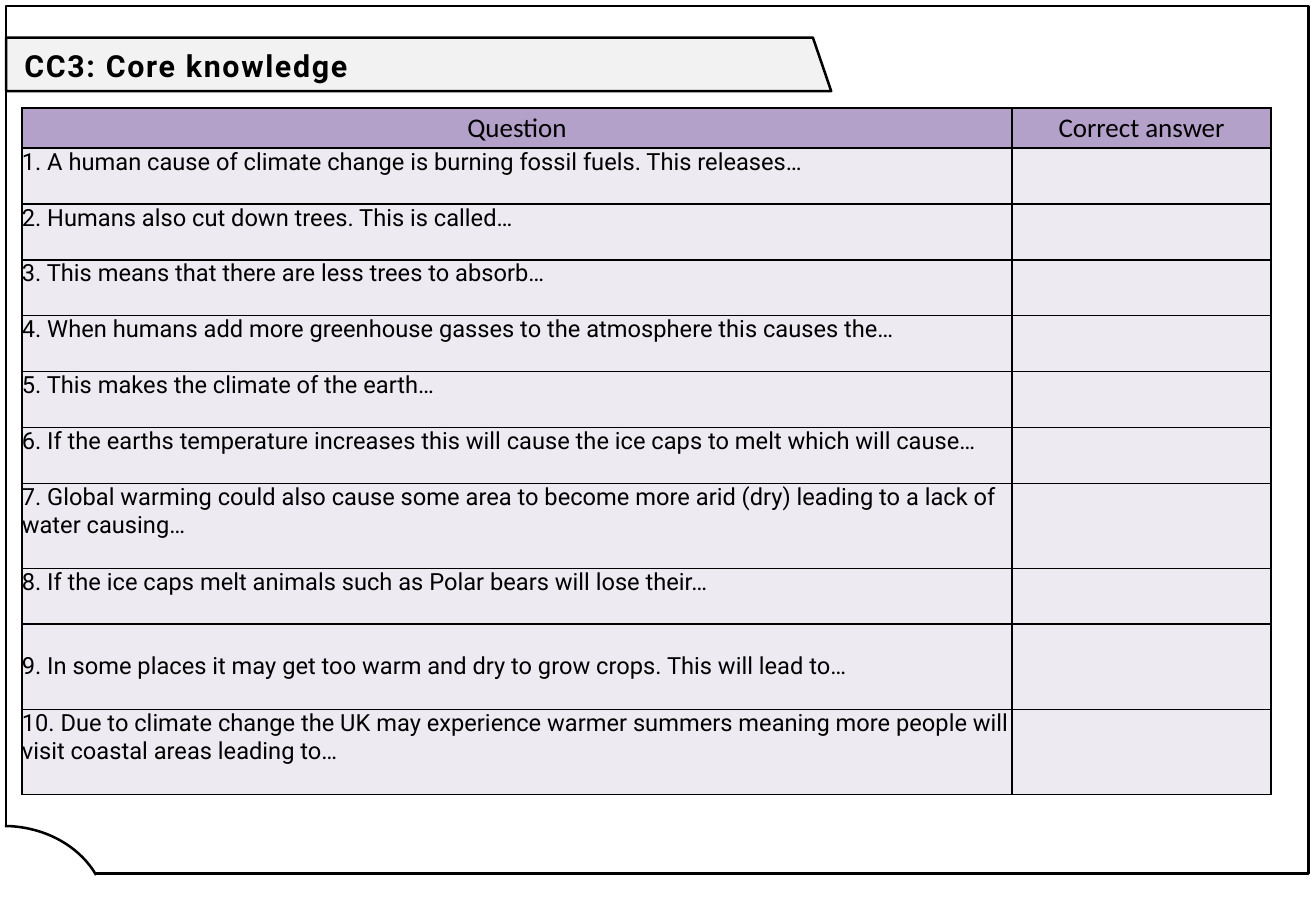
from lxml.etree import SubElement
from pptx import Presentation
from pptx.dml.color import RGBColor
from pptx.enum.shapes import MSO_SHAPE as Shape
from pptx.enum.text import MSO_ANCHOR as Anchor, PP_ALIGN as Align
from pptx.oxml.ns import qn
from pptx.util import Inches, Pt

BLACK = RGBColor(0x00, 0x00, 0x00)
WHITE = RGBColor(0xFF, 0xFF, 0xFF)
BANNER_GREY = RGBColor(0xF2, 0xF2, 0xF2)
HEADER_PURPLE = RGBColor(0xB4, 0xA1, 0xCA)
ROW_LILAC = RGBColor(0xED, 0xEA, 0xF1)

HEADINGS = ["Question", "Correct answer"]
QUESTIONS = [
    "A human cause of climate change is burning fossil fuels. This releases…",
    "Humans also cut down trees. This is called…",
    "This means that there are less trees to absorb…",
    "When humans add more greenhouse gasses to the atmosphere this causes the…",
    "This makes the climate of the earth…",
    "If the earths temperature increases this will cause the ice caps to melt which will cause…",
    "Global warming could also cause some area to become more arid (dry) leading to a lack of "
    "water causing…",
    "If the ice caps melt animals such as Polar bears will lose their…",
    "In some places it may get too warm and dry to grow crops. This will lead to…",
    "Due to climate change the UK may experience warmer summers meaning more people will "
    "visit coastal areas leading to…",
]
TALL_ROWS = {7, 9, 10}
CENTRED_ROW = 9
COLUMN_WIDTHS = [8.15, 2.13]
HEADER_HEIGHT, ROW_HEIGHT, TALL_HEIGHT = 0.33, 0.46, 0.7


def style_outline(shape, fill=None):
    shape.shadow.inherit = False
    if fill is None:
        shape.fill.background()
    else:
        shape.fill.solid()
        shape.fill.fore_color.rgb = fill
    shape.line.color.rgb = BLACK
    shape.line.width = Pt(1.5)


def add_banner(page):
    builder = page.shapes.build_freeform(Inches(0.05), Inches(0.31))
    corners = [(6.69, 0.31), (6.84, 0.75), (0.05, 0.75)]
    builder.add_line_segments([(Inches(x), Inches(y)) for x, y in corners], close=True)
    style_outline(builder.convert_to_shape(), BANNER_GREY)


def add_frame(page):
    """Draw the page border and the arc that cuts its lower left corner."""
    border = page.shapes.add_shape(
        Shape.RECTANGLE, Inches(0.05), Inches(0.05), Inches(10.72), Inches(7.14))
    style_outline(border)
    corner = page.shapes.add_shape(
        Shape.ARC, Inches(-0.82), Inches(6.8), Inches(1.7), Inches(1.45))
    corner.adjustments[0] = 162.52
    corner.adjustments[1] = 202.27
    style_outline(corner, WHITE)


def set_title(page, text):
    title = page.shapes.title
    title.left, title.top = Inches(0.1), Inches(0.21)
    title.width, title.height = Inches(6.43), Inches(0.63)
    frame = title.text_frame
    frame.text = text
    frame.vertical_anchor = Anchor.MIDDLE
    para = frame.paragraphs[0]
    para.alignment = Align.LEFT
    para.line_spacing = 1.07
    para.space_after = Pt(8)
    set_font(para, "Roboto", 18, bold=True)
    para.runs[0].font._element.set("spc", "100")
    page.shapes._spTree.append(title._element)  # in front of the banner


def set_font(para, name, size, bold=False):
    para.font.name = name
    para.font.size = Pt(size)
    para.font.bold = bold
    para.font.color.rgb = BLACK


def format_cell(cell, fill):
    properties = cell._tc.get_or_add_tcPr()
    for side in ("a:lnL", "a:lnR", "a:lnT", "a:lnB"):
        line = SubElement(properties, qn(side), w=str(Pt(1)))
        SubElement(SubElement(line, qn("a:solidFill")), qn("a:srgbClr"), val=str(BLACK))
    cell.fill.solid()
    cell.fill.fore_color.rgb = fill


def write_cell(cell, text, font_name, size, alignment, anchor):
    cell.margin_left = cell.margin_right = cell.margin_top = cell.margin_bottom = 0
    cell.vertical_anchor = anchor
    cell.text = text
    para = cell.text_frame.paragraphs[0]
    para.alignment = alignment
    set_font(para, font_name, size)


def add_question_table(page):
    heights = [HEADER_HEIGHT] + [
        TALL_HEIGHT if number in TALL_ROWS else ROW_HEIGHT
        for number in range(1, len(QUESTIONS) + 1)]
    table = page.shapes.add_table(
        len(heights), len(COLUMN_WIDTHS), Inches(0.18), Inches(0.89),
        Inches(sum(COLUMN_WIDTHS)), Inches(sum(heights))).table
    table.first_row = table.horz_banding = False
    for column, width in zip(table.columns, COLUMN_WIDTHS):
        column.width = Inches(width)
    for index, (row, height) in enumerate(zip(table.rows, heights)):
        row.height = Inches(height)
        for cell in row.cells:
            format_cell(cell, ROW_LILAC if index else HEADER_PURPLE)
    for cell, heading in zip(table.rows[0].cells, HEADINGS):
        write_cell(cell, heading, "Calibri", 16, Align.CENTER, Anchor.MIDDLE)
    for number, question in enumerate(QUESTIONS, 1):
        anchor = Anchor.MIDDLE if number == CENTRED_ROW else Anchor.TOP
        write_cell(table.cell(number, 0), f"{number}. {question}",
                   "Roboto", 14, Align.LEFT, anchor)


def main():
    deck = Presentation()
    deck.slide_width, deck.slide_height = Inches(10.83), Inches(7.5)
    page = deck.slides.add_slide(deck.slide_layouts.get_by_name("Title Only"))
    add_banner(page)
    add_frame(page)
    set_title(page, "CC3: Core knowledge")
    add_question_table(page)
    deck.save("out.pptx")


if __name__ == "__main__":
    main()
